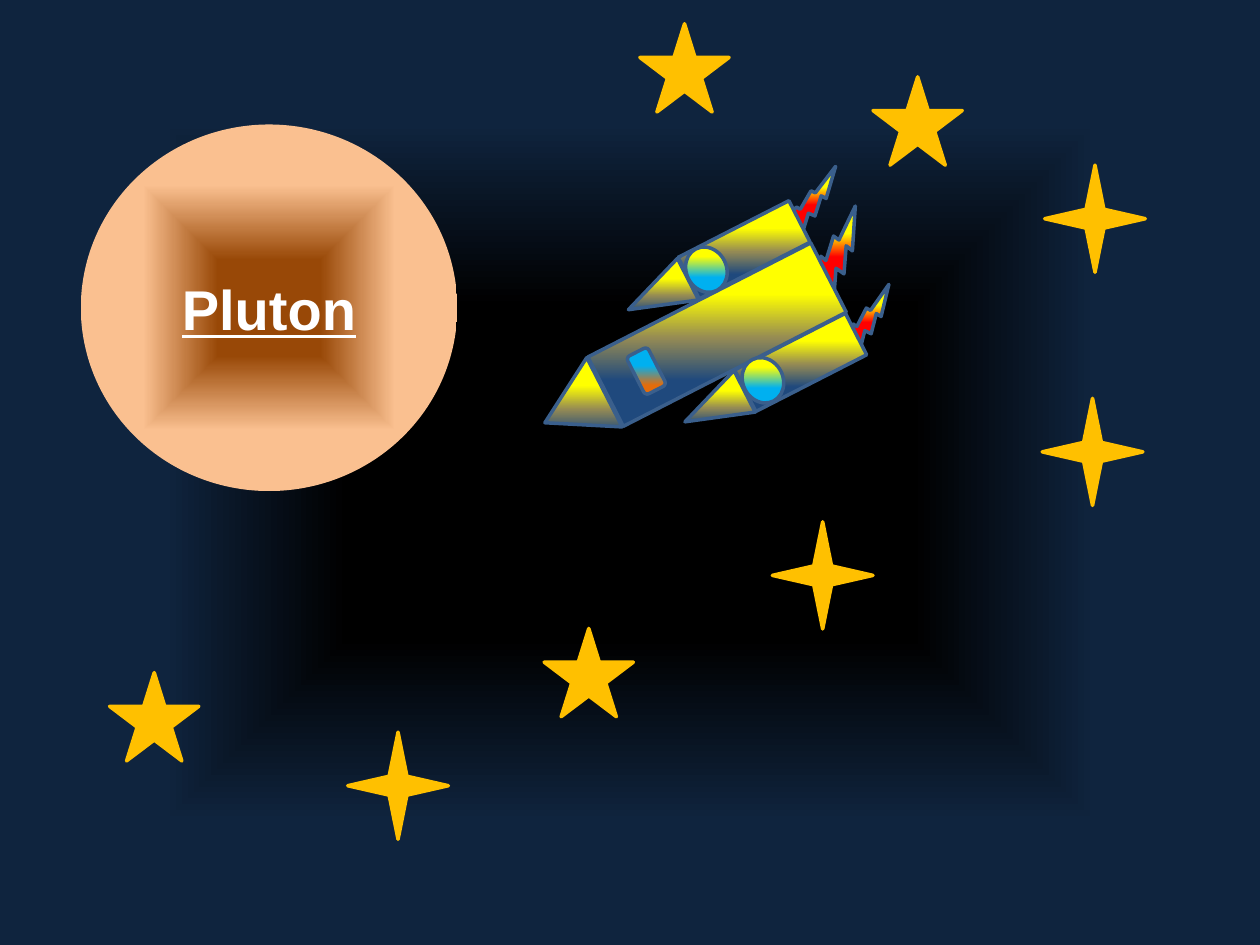
from lxml import etree
from pptx import Presentation
from pptx import util as u
from pptx.dml.color import RGBColor
from pptx.enum import shapes, text
from pptx.oxml.ns import qn

C = {"black": "000000", "night": "0F243E", "brown": "984807", "peach": "FAC090",
     "white": "FFFFFF", "yellow": "FFFF00", "red": "FF0000", "khaki": "948A54",
     "navy": "1F497D", "sky": "00B0F0", "orange": "E46C0A", "edge": "3A5F8C",
     "gold": "FFC000"}
M = shapes.MSO_SHAPE


def set_gradient(fill, element, stops, radial=False):
    """Fill with (percent, colour) stops, from the centre outwards or top to bottom."""
    fill.gradient()
    grad = element.find(".//" + qn("a:gradFill"))
    for child in list(grad):
        grad.remove(child)
    grad.set("rotWithShape", "0")
    gs_list = etree.SubElement(grad, qn("a:gsLst"))
    for pos, colour in stops:
        gs = etree.SubElement(gs_list, qn("a:gs"), pos=str(pos * 1000))
        etree.SubElement(gs, qn("a:srgbClr"), val=C[colour])
    if radial:
        path = etree.SubElement(grad, qn("a:path"), path="shape")
        etree.SubElement(path, qn("a:fillToRect"), {side: "50000" for side in "ltrb"})
    else:
        etree.SubElement(grad, qn("a:lin"), ang="5400000", scaled="0")


def write(sp, content, size=32, font="Arial", colour="white", bold=False, underline=False):
    tf = sp.text_frame
    tf.word_wrap = True
    tf.vertical_anchor = text.MSO_ANCHOR.MIDDLE
    p = tf.paragraphs[0]
    p.alignment = text.PP_ALIGN.CENTER
    r = p.add_run()
    r.text = content
    r.font.size = u.Pt(size)
    r.font.name = font
    r.font.bold = bold
    r.font.underline = underline
    r.font.color.rgb = RGBColor.from_string(C[colour])


prs = Presentation()
prs.slide_width, prs.slide_height = u.Cm(25.4), u.Cm(19.05)
s = prs.slides.add_slide(prs.slide_layouts[6])

# Night sky
set_gradient(s.background.fill, s.element, [(35, "black"), (74, "night")], radial=True)

# Planet
planet = s.shapes.add_shape(M.OVAL, u.Cm(1.63), u.Cm(2.51), u.Cm(7.59), u.Cm(7.39))
planet.shadow.inherit = False
planet.line.fill.background()
set_gradient(planet.fill, planet.element, [(26, "brown"), (67, "peach")], radial=True)
write(planet, "Pluton", bold=True, underline=True)

# Rocket: preset, gradient, then left, top, width, height of each part
flame = [(28, "yellow"), (52, "red")]
hull = [(28, "yellow"), (52, "khaki"), (75, "navy")]
window = [(39, "sky"), (79, "orange")]
porthole = [(28, "yellow"), (63, "sky")]
rocket_parts = [
    (M.LIGHTNING_BOLT, flame, [(15.93, 3.35, 0.91, 1.5), (16.18, 4.39, 1.45, 1.5),
                               (17.04, 5.77, 0.94, 1.4)]),
    (M.RECTANGLE, hull, [(15.67, 6.05, 0.94, 2.51), (13.67, 4.22, 1.57, 5.05),
                         (14.53, 3.78, 0.94, 2.51)]),
    (M.ISOSCELES_TRIANGLE, hull, [(10.8, 7.54, 1.57, 1.35), (13.94, 7.52, 0.94, 1.35),
                                  (12.8, 5.26, 0.94, 1.35)]),
    (M.ROUNDED_RECTANGLE, window, [(12.6, 7.24, 0.86, 0.48)]),
    (M.OVAL, porthole, [(13.77, 5.03, 0.94, 0.81), (14.91, 7.26, 0.94, 0.81)]),
]
rocket = s.shapes.add_group_shape()
for preset, stops, boxes in rocket_parts:
    for box in boxes:
        sp = rocket.shapes.add_shape(preset, *map(u.Cm, box))
        sp.rotation = 242.9
        sp.shadow.inherit = False
        set_gradient(sp.fill, sp.element, stops)
        sp.line.color.rgb = RGBColor.from_string(C["edge"])
        sp.line.width = u.Pt(2)

# Stars: preset, size, then left and top of each
star_sets = [
    (M.STAR_5_POINT, (1.8, 1.78), [(17.6, 1.55), (10.97, 12.67), (2.21, 13.56), (12.9, 0.48)]),
    (M.STAR_4_POINT, (2.03, 2.16), [(7.01, 14.76), (21.06, 3.33), (15.57, 10.52), (21.01, 8.03)]),
]
stars = s.shapes.add_group_shape()
for preset, size, places in star_sets:
    for place in places:
        sp = stars.shapes.add_shape(preset, *map(u.Cm, place + size))
        sp.shadow.inherit = False
        sp.fill.solid()
        sp.fill.fore_color.rgb = RGBColor.from_string(C["gold"])
        sp.line.color.rgb = RGBColor.from_string(C["gold"])
        sp.line.width = u.Pt(2)

prs.save("out.pptx")
